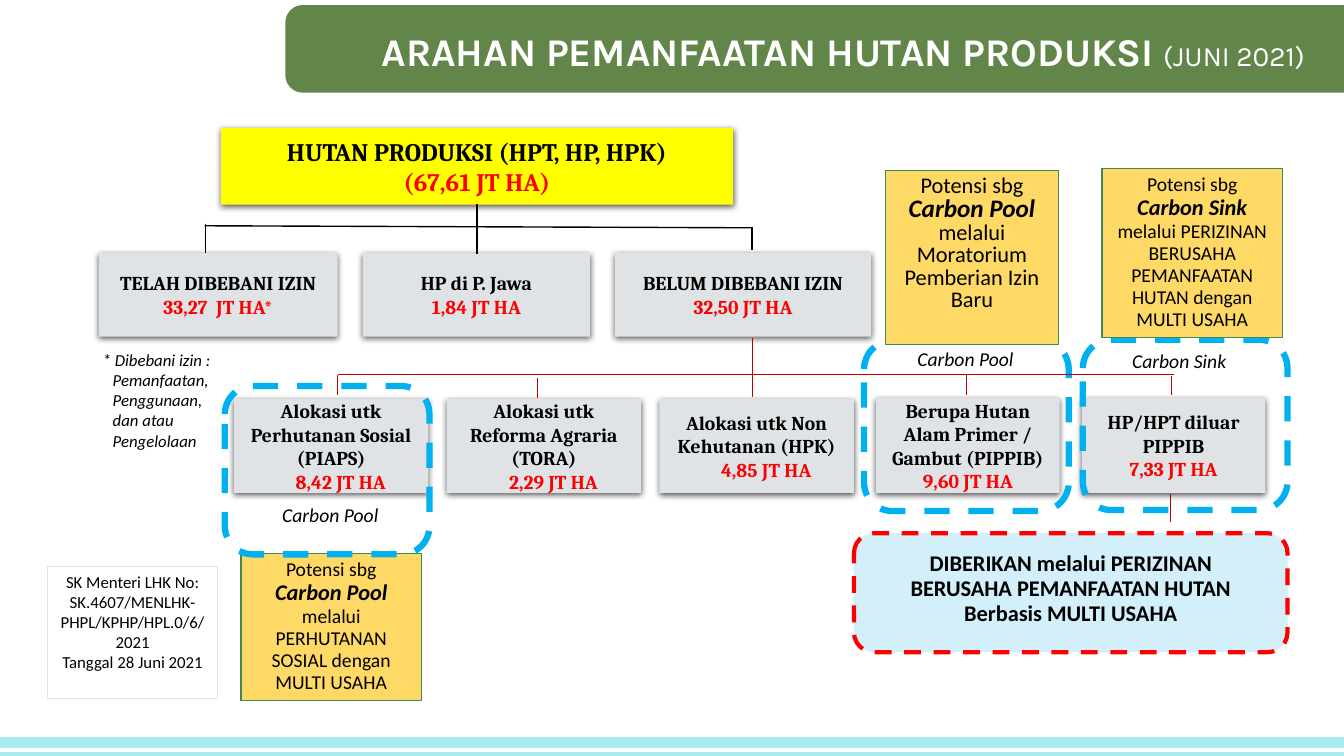
from dataclasses import dataclass

from lxml.etree import SubElement
from pptx import Presentation
from pptx.dml.color import RGBColor
from pptx.enum.dml import MSO_LINE
from pptx.enum.shapes import MSO_CONNECTOR, MSO_SHAPE
from pptx.enum.text import MSO_ANCHOR, MSO_AUTO_SIZE, PP_ALIGN
from pptx.oxml.ns import qn
from pptx.util import Inches, Pt


@dataclass(frozen=True)
class Theme:
    """Colours, fonts and type sizes of the slide."""
    green: str = "62854A"
    aqua: str = "A8ECEF"
    white: str = "FFFFFF"
    black: str = "000000"
    grey: str = "DFE3E5"
    yellow: str = "FFFF00"
    red: str = "FF0000"
    dark_red: str = "C00000"
    blue: str = "00B0F0"
    pale_blue: str = "D2EFFA"
    gold: str = "FFD966"
    gold_edge: str = "3E8853"
    title_font: str = "Karla"
    card_font: str = "Cambria"
    note_font: str = "Calibri"
    title_size: int = 28
    date_size: int = 20
    head_size: int = 18
    strong_size: int = 16
    body_size: int = 14
    small_size: int = 12


THEME = Theme()


def style(name, size, color=THEME.black, bold=False, italic=False):
    """Return the format values of a run."""
    return {"name": name, "size": Pt(size), "bold": bold, "italic": italic, "color": color}


def card_style(size, color=THEME.black):
    """Return the bold format of card text."""
    return style(THEME.card_font, size, color, bold=True)


def note_style(size, **emphasis):
    """Return the format of note text."""
    return style(THEME.note_font, size, **emphasis)


def place(shape, area):
    """Move and size a shape to left, top, width, height in inches."""
    for name, value in zip(("left", "top", "width", "height"), area):
        setattr(shape, name, Inches(value))


def add_paragraph(frame, spans, first, align=PP_ALIGN.CENTER, spacing=None, margin=0, indent=0):
    """Write one paragraph of (text, format) spans."""
    para = frame.paragraphs[0] if first else frame.add_paragraph()
    props = para._p.get_or_add_pPr()
    props.set("marL", str(Inches(margin)))
    props.set("indent", str(Inches(indent)))
    for name, value in {"alignment": align, "line_spacing": spacing}.items():
        setattr(para, name, value)
    for text, values in spans:
        span = para.add_run()
        span.text = text
        for name, value in values.items():
            if name == "color":
                span.font.color.rgb = RGBColor.from_string(value)
            else:
                setattr(span.font, name, value)


def set_frame(frame, anchor=MSO_ANCHOR.TOP, fit=MSO_AUTO_SIZE.SHAPE_TO_FIT_TEXT, wrap=True):
    """Set how a text frame wraps, anchors and grows."""
    values = {"word_wrap": wrap, "vertical_anchor": anchor, "auto_size": fit}
    for name, value in values.items():
        setattr(frame, name, value)


def add_box(page, area, fill=None, line=None, width=1, dashed=False, kind=MSO_SHAPE.RECTANGLE):
    """Add a preset shape without shadow."""
    box = page.shapes.add_shape(kind, *map(Inches, area))
    box.shadow.inherit = False
    if fill:
        box.fill.solid()
        box.fill.fore_color.rgb = RGBColor.from_string(fill)
    else:
        box.fill.background()
    if line:
        box.line.color.rgb = RGBColor.from_string(line)
        box.line.width = Pt(width)
        if dashed:
            box.line.dash_style = MSO_LINE.DASH
    else:
        box.line.fill.background()
    return box


def add_frame(page, area, line=THEME.blue, width=4.5, fill=None):
    """Add a rounded dashed outline."""
    return add_box(page, area, fill, line, width, True, MSO_SHAPE.ROUNDED_RECTANGLE)


def add_card(page, area, label, amount, fill=THEME.grey, size=THEME.body_size, margin=0):
    """Add a shadowed card with a label and a red amount."""
    card = add_box(page, area, fill)
    effects = card._element.spPr.find(qn("a:effectLst"))
    shadow = SubElement(effects, qn("a:outerShdw"), blurRad=str(Pt(4.5)), dist=str(Pt(1.5)),
                        dir="5400000", algn="t", rotWithShape="0")
    color = SubElement(shadow, qn("a:srgbClr"), val=THEME.black)
    SubElement(color, qn("a:alpha"), val="63000")
    set_frame(card.text_frame, MSO_ANCHOR.MIDDLE, MSO_AUTO_SIZE.NONE)
    add_paragraph(card.text_frame, [(label, card_style(size))], True)
    add_paragraph(card.text_frame, [(amount, card_style(size, THEME.red))], False, margin=margin)


def add_text(page, area, text, values, wrap=True, **layout):
    """Add a text box of one paragraph."""
    box = page.shapes.add_textbox(*map(Inches, area))
    set_frame(box.text_frame, wrap=wrap)
    add_paragraph(box.text_frame, [(text, values)], True, **layout)


def add_potential(page, area, role, means, size, role_size, spacing):
    """Add a gold note on the carbon potential."""
    note = add_box(page, area, THEME.gold, THEME.gold_edge)
    set_frame(note.text_frame)
    spans = [("Potensi sbg ", note_style(size)),
             (role + " ", note_style(role_size, bold=True, italic=True)),
             (means, note_style(size))]
    add_paragraph(note.text_frame, spans, True, spacing=spacing)


def add_line(page, start, end, color=THEME.dark_red, width=0.75):
    """Add a straight connector."""
    line = page.shapes.add_connector(MSO_CONNECTOR.STRAIGHT, *map(Inches, start + end))
    line.line.color.rgb = RGBColor.from_string(color)
    line.line.width = Pt(width)
    SubElement(line._element.spPr, qn("a:effectLst"))


def add_title(page):
    """Fill the title placeholder over its green band."""
    title = page.shapes.title
    place(title, (3.1, 0.03, 10.23, 0.94))
    set_frame(title.text_frame, MSO_ANCHOR.MIDDLE, MSO_AUTO_SIZE.NONE)
    spans = [("ARAHAN PEMANFAATAN HUTAN PRODUKSI ",
              style(THEME.title_font, THEME.title_size, THEME.white, bold=True)),
             ("(JUNI 2021)", style(THEME.title_font, THEME.date_size, THEME.white))]
    add_paragraph(title.text_frame, spans, True, margin=0.3)
    band = add_box(page, (2.83, 0.05, 11.23, 0.87), THEME.green, kind=MSO_SHAPE.ROUNDED_RECTANGLE)
    band.adjustments[0] = 0.2
    page.shapes._spTree.insert(2, band._element)


def add_cards(page):
    """Add the three levels of forest cards."""
    add_card(page, (2.19, 1.27, 5.08, 0.76), "HUTAN PRODUKSI (HPT, HP, HPK)", "(67,61 JT HA)",
             THEME.yellow, THEME.head_size)
    for left, width, label, amount in (
            (0.98, 2.37, "TELAH DIBEBANI IZIN", "33,27  JT HA*"),
            (3.6, 2.25, "HP di P. Jawa", "1,84 JT HA"),
            (6.1, 2.54, "BELUM DIBEBANI IZIN", "32,50 JT HA")):
        add_card(page, (left, 2.51, width, 0.83), label, amount)
    allocations = (("Perhutanan Sosial (PIAPS)", "8,42 JT HA"),
                   ("Reforma Agraria (TORA)", "2,29 JT HA"),
                   ("Non Kehutanan (HPK)", "4,85 JT HA"))
    for index, (label, amount) in enumerate(allocations):
        area = (2.32 + 2.11 * index, 3.96, 1.93, 0.93)
        add_card(page, area, "Alokasi utk " + label, amount, margin=0.19)
    for left, label, amount in (
            (8.69, "Berupa Hutan Alam Primer / Gambut (PIPPIB)", "9,60 JT HA"),
            (10.73, "HP/HPT diluar PIPPIB", "7,33 JT HA")):
        add_card(page, (left, 3.95, 1.82, 0.94), label, amount)


def add_branches(page):
    """Add the connecting lines of the tree."""
    for start, end in (((2.03, 2.24), (7.46, 2.26)), ((4.73, 2.02), (4.73, 2.52)),
                       ((2.04, 2.22), (2.04, 2.51)), ((7.46, 2.25), (7.46, 2.48))):
        add_line(page, start, end, THEME.black, 1)
    for x, top, bottom in ((3.35, 3.72, 3.92), (5.33, 3.75, 3.95), (7.46, 3.35, 3.94),
                           (9.59, 3.72, 3.92), (11.62, 3.73, 3.92), (11.61, 4.9, 5.18)):
        add_line(page, (x, top), (x, bottom))
    add_line(page, (3.35, 3.72), (11.64, 3.72))


def add_notes(page):
    """Add the permit, decree and carbon notes."""
    add_frame(page, (8.47, 5.29, 4.3, 1.18), THEME.red, 3, THEME.pale_blue)
    add_text(page, (8.86, 5.42, 3.52, 0.86),
             "DIBERIKAN melalui PERIZINAN BERUSAHA PEMANFAATAN HUTAN Berbasis MULTI USAHA",
             note_style(THEME.strong_size, bold=True), spacing=0.94)
    add_text(page, (0.92, 3.42, 1.47, 1.11),
             "* Dibebani izin : Pemanfaatan, Penggunaan, dan atau Pengelolaan",
             note_style(THEME.small_size, italic=True), align=PP_ALIGN.LEFT, margin=0.1, indent=-0.1)
    decree = add_box(page, (0.47, 5.62, 1.69, 1.31), line=THEME.grey, width=0.75)
    set_frame(decree.text_frame)
    for index, text in enumerate(("SK Menteri LHK No: SK.4607/MENLHK-PHPL/KPHP/HPL.0/6/2021",
                                  "Tanggal 28 Juni 2021")):
        add_paragraph(decree.text_frame, [(text, note_style(THEME.small_size))], index == 0)
    for area, role, means, size, role_size, spacing in (
            ((8.78, 1.69, 1.72, 1.73), "Carbon Pool", "melalui Moratorium Pemberian Izin Baru",
             THEME.strong_size, THEME.head_size, 0.83),
            ((10.93, 1.67, 1.79, 1.68), "Carbon Sink",
             "melalui PERIZINAN BERUSAHA PEMANFAATAN HUTAN dengan MULTI USAHA",
             THEME.body_size, THEME.strong_size, 0.94),
            ((2.39, 5.49, 1.79, 1.46), "Carbon Pool",
             "melalui PERHUTANAN SOSIAL dengan MULTI USAHA",
             THEME.body_size, THEME.strong_size, 0.94)):
        add_potential(page, area, role, means, size, role_size, spacing)


def main():
    """Build the slide and save it."""
    deck = Presentation()
    deck.slide_width, deck.slide_height = Inches(13.33), Inches(7.5)
    page = deck.slides.add_slide(deck.slide_layouts[5])
    add_title(page)
    add_box(page, (0, 7.31, 13.33, 0.19), THEME.aqua)
    add_box(page, (0, 7.42, 13.33, 0.04), THEME.white)
    add_cards(page)
    add_frame(page, (8.57, 3.38, 2.03, 1.69))
    add_branches(page)
    add_frame(page, (10.74, 3.37, 2.03, 1.69))
    add_notes(page)
    add_frame(page, (2.23, 3.83, 2.03, 1.67))
    for left, top, role in ((9, 3.39, "Carbon Pool"), (11.13, 3.41, "Carbon Sink"),
                            (2.7, 4.94, "Carbon Pool")):
        add_text(page, (left, top, 1.17, 0.34), role, note_style(THEME.body_size, italic=True),
                 wrap=False, align=PP_ALIGN.LEFT)
    deck.save("out.pptx")


if __name__ == "__main__":
    main()
